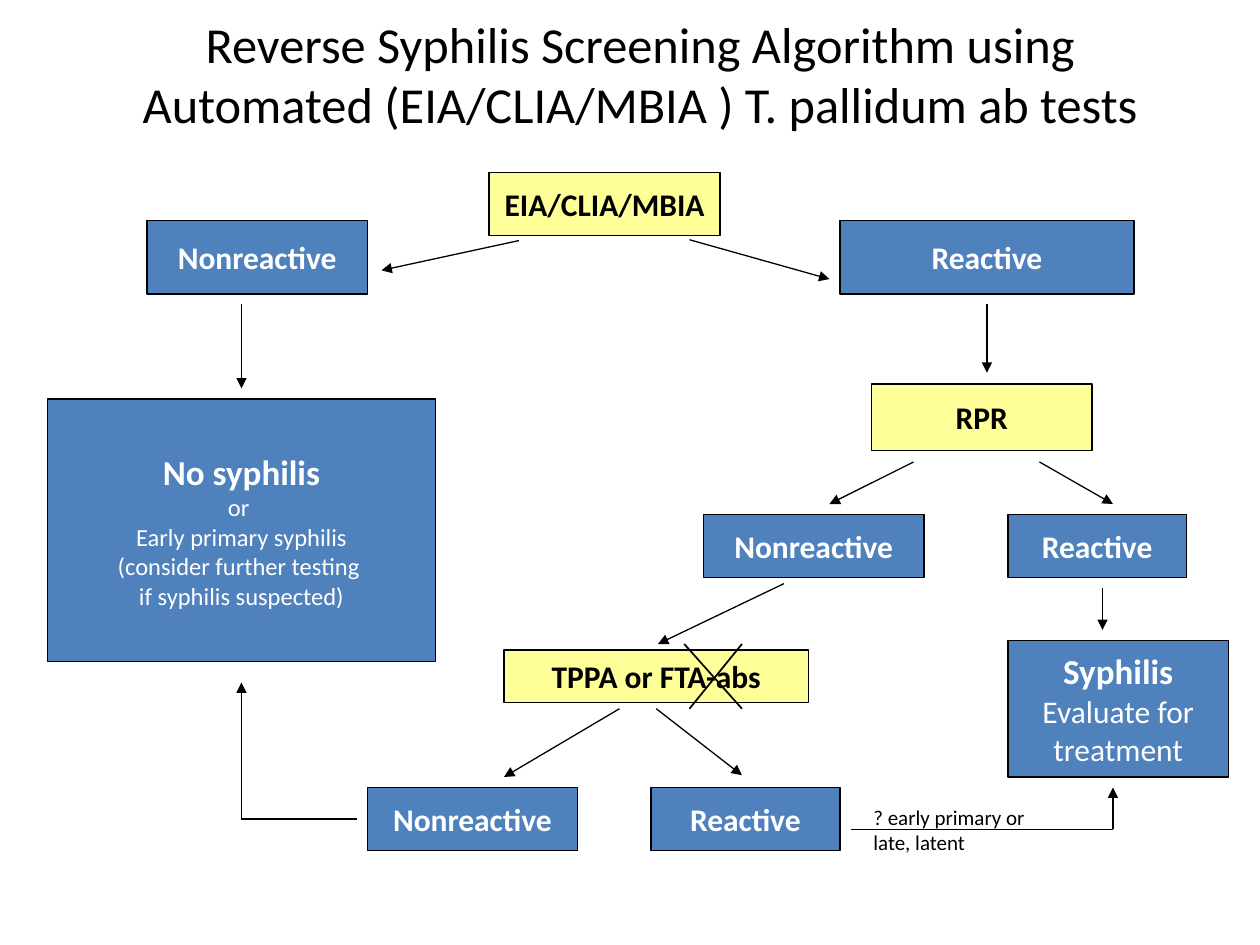
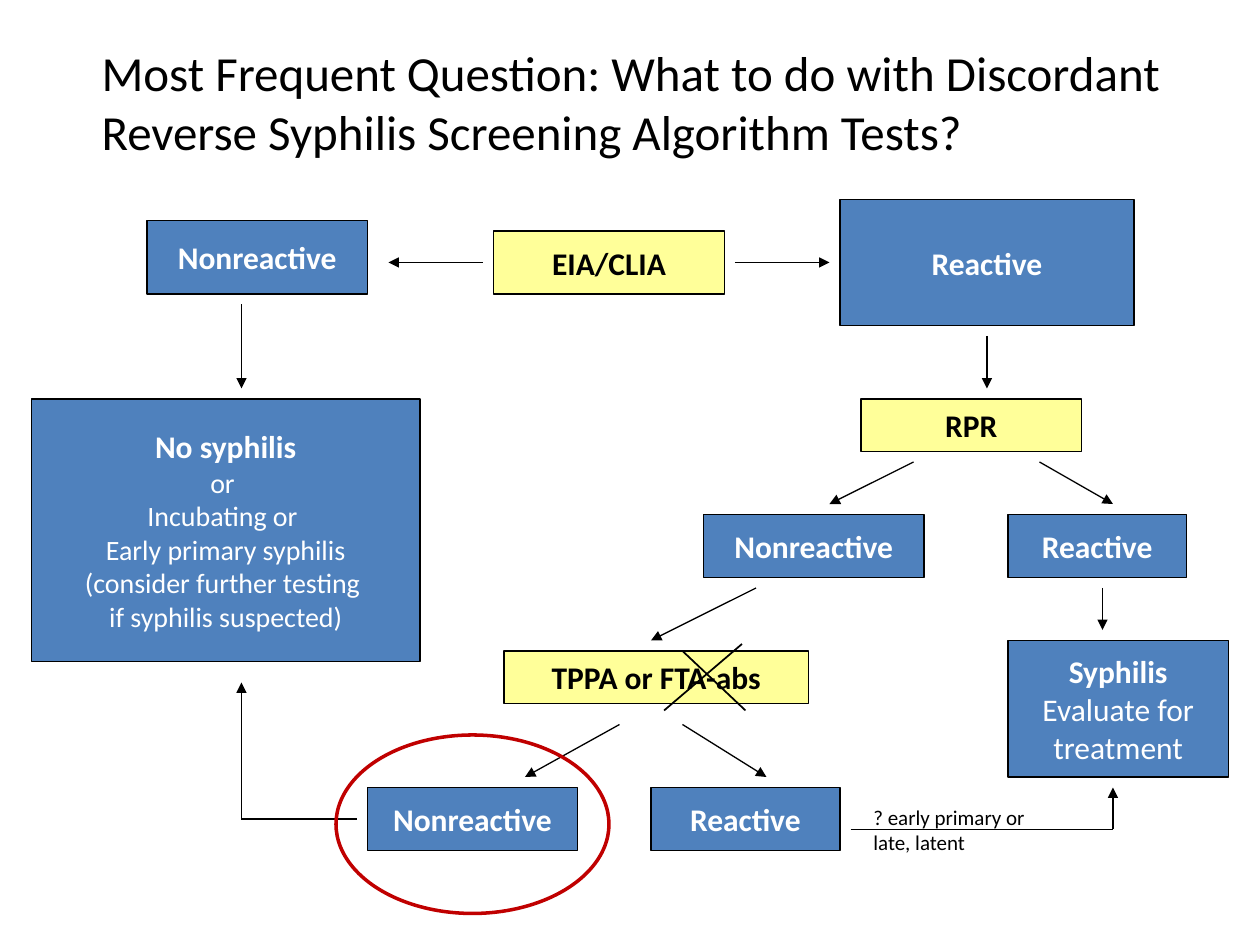
import dataclasses

import pptx
import pptx.dml.color
import pptx.enum.shapes
import pptx.enum.text
import pptx.oxml.ns
import pptx.util
from lxml import etree

Pt = pptx.util.Pt
RGB = pptx.dml.color.RGBColor.from_string
Shape = pptx.enum.shapes.MSO_SHAPE
Align = pptx.enum.text.PP_ALIGN
Anchor = pptx.enum.text.MSO_ANCHOR
Fit = pptx.enum.text.MSO_AUTO_SIZE


@dataclasses.dataclass(frozen=True)
class Theme:
    font: str = "Calibri"
    ink: str = "000000"
    paper: str = "FFFFFF"
    result: str = "4F81BD"
    test: str = "FFFF99"
    alert: str = "C00000"
    title: float = 28
    large: float = 20
    body: float = 18
    medium: float = 16
    small: float = 14
    note: float = 12
    thin: float = 0.75
    cross: float = 1
    ring: float = 2


class Page:
    """Holds the theme and the current slide."""

    def __init__(self, deck, theme):
        self.theme = theme
        self.slide = deck.slides.add_slide(deck.slide_layouts[6])

    def fill_rows(self, frame, rows, color, align):
        """Fill a frame with rows of (text, size, bold)."""
        frame.vertical_anchor = Anchor.MIDDLE
        for i, (text, size, bold) in enumerate(rows):
            para = frame.add_paragraph() if i else frame.paragraphs[0]
            para.text = text
            para.alignment = align
            para.font.name = self.theme.font
            para.font.size = Pt(size)
            para.font.bold = bold
            para.font.color.rgb = RGB(color)

    def text(self, place, text, size, align=Align.LEFT):
        box = self.slide.shapes.add_textbox(*map(Pt, place))
        box.text_frame.word_wrap = True
        self.fill_rows(box.text_frame, [(text, size, False)], self.theme.ink, align)
        return box.text_frame

    def note(self, place, text):
        frame = self.text(place, text, self.theme.note)
        frame.vertical_anchor = Anchor.TOP
        frame.auto_size = Fit.SHAPE_TO_FIT_TEXT

    def shape(self, kind, place, line, width):
        item = self.slide.shapes.add_shape(kind, *map(Pt, place))
        item.shadow.inherit = False
        item.line.color.rgb = RGB(line)
        item.line.width = Pt(width)
        return item

    def box(self, place, rows, fill, color):
        item = self.shape(Shape.RECTANGLE, place, self.theme.ink, self.theme.thin)
        item.fill.solid()
        item.fill.fore_color.rgb = RGB(fill)
        item.text_frame.word_wrap = False
        self.fill_rows(item.text_frame, rows, color, Align.CENTER)

    def test(self, place, name):
        rows = [(name, self.theme.body, True)]
        self.box(place, rows, self.theme.test, self.theme.ink)

    def result(self, place, head, size=None, tail=(), small=None):
        """A bold heading, with plain lines below it if any."""
        body = self.theme.body
        rows = [(head, size or body, True)]
        rows += [(text, small or body, False) for text in tail]
        self.box(place, rows, self.theme.result, self.theme.paper)

    def line(self, ends, width=None, arrow=False):
        kind = pptx.enum.shapes.MSO_CONNECTOR.STRAIGHT
        item = self.slide.shapes.add_connector(kind, *map(Pt, ends))
        item.line.color.rgb = RGB(self.theme.ink)
        item.line.width = Pt(width or self.theme.thin)
        qn = pptx.oxml.ns.qn
        props = item.element.spPr
        if arrow:
            etree.SubElement(props.find(qn("a:ln")), qn("a:tailEnd"), type="triangle")
        etree.SubElement(props, qn("a:effectLst"))

    def arrows(self, *routes):
        for ends in routes:
            self.line(ends, arrow=True)

    def cross(self, *strokes):
        for ends in strokes:
            self.line(ends, self.theme.cross)

    def ring(self, place):
        item = self.shape(Shape.OVAL, place, self.theme.alert, self.theme.ring)
        item.fill.background()


def draw_shared(page):
    """The part of the flow chart that both slides have."""
    # Results
    page.result((84, 126, 126, 42), "Nonreactive")
    for left, top, wide in ((402, 294, 126), (210, 450, 120)):
        page.result((left, top, wide, 36), "Nonreactive")
    for left, top, wide in ((576, 294, 102), (372, 450, 108)):
        page.result((left, top, wide, 36), "Reactive")

    # Arrows and elbows
    page.arrows(
        (138, 174, 138, 222),
        (594, 264, 636, 288),
        (522, 264, 474, 288),
        (630, 336, 630, 360),
        (138, 468, 138, 390),
        (636, 474, 636, 450),
    )
    page.line((204, 468, 138, 468))
    page.line((486, 474, 636, 474))
    page.note((492, 456, 108, 36), "? early primary or late, latent")


def draw_screen(deck, theme):
    page = Page(deck, theme)
    page.text(
        (57, 0, 618, 84),
        "Reverse Syphilis Screening Algorithm using "
        "Automated (EIA/CLIA/MBIA ) T. pallidum ab tests",
        theme.title + 0.8,
        Align.CENTER,
    )
    draw_shared(page)

    # Tests and outcomes
    page.test((279.5, 98.5, 132, 36), "EIA/CLIA/MBIA")
    page.test((498, 219.5, 126, 38), "RPR")
    page.test((288, 371.5, 174, 30), "TPPA or FTA-abs")
    page.result((480, 126, 168, 42), "Reactive")
    page.result(
        (27, 228, 222, 150), "No syphilis", theme.large,
        ("or ", "Early primary syphilis", "(consider further testing ",
         "if syphilis suspected)"),
        theme.small,
    )
    page.result((576, 366, 126, 78), "Syphilis", theme.large,
                ("Evaluate for", "treatment"))

    # Arrows and the struck-out test
    page.arrows(
        (394, 137, 474, 159.5),
        (296.5, 137.5, 218, 154.5),
        (564, 174, 564, 213),
        (448, 333.5, 376, 368),
        (354, 405, 288, 444),
        (375, 405, 424, 443),
    )
    page.cross((391, 368, 424, 405), (424, 368, 394, 405))


def draw_discord(deck, theme):
    page = Page(deck, theme)
    page.text(
        (51, 1.5, 666, 113),
        "Most Frequent Question: What to do with Discordant "
        "Reverse Syphilis Screening Algorithm Tests?",
        theme.title,
    )
    draw_shared(page)

    # Tests and outcomes
    page.test((282, 132, 132, 36), "EIA/CLIA")
    page.test((492, 228, 126, 30), "RPR")
    page.test((288, 372, 174, 30), "TPPA or FTA-abs")
    page.result((480, 114, 168, 72), "Reactive")
    page.result(
        (18, 228, 222, 150), "No syphilis", theme.body,
        ("or ", "Incubating or ", "Early primary syphilis",
         "(consider further testing ", "if syphilis suspected)"),
        theme.medium,
    )
    page.result((576, 366, 126, 78), "Syphilis", theme.body,
                ("Evaluate for", "treatment"))

    # Arrows and the struck-out test
    page.arrows(
        (420, 150, 474, 150),
        (276, 150, 222, 150),
        (564, 192, 564, 222),
        (432, 336, 372, 366),
        (354, 414, 300, 444),
        (390, 414, 438, 444),
    )
    page.cross((390, 372, 426, 406), (424, 368, 379.5, 406))

    # Ring around the discordant result
    page.ring((192, 420, 156, 102))


def main():
    deck = pptx.Presentation()
    deck.slide_width, deck.slide_height = Pt(720), Pt(540)
    theme = Theme()
    draw_screen(deck, theme)
    draw_discord(deck, theme)
    deck.save("out.pptx")


if __name__ == "__main__":
    main()
